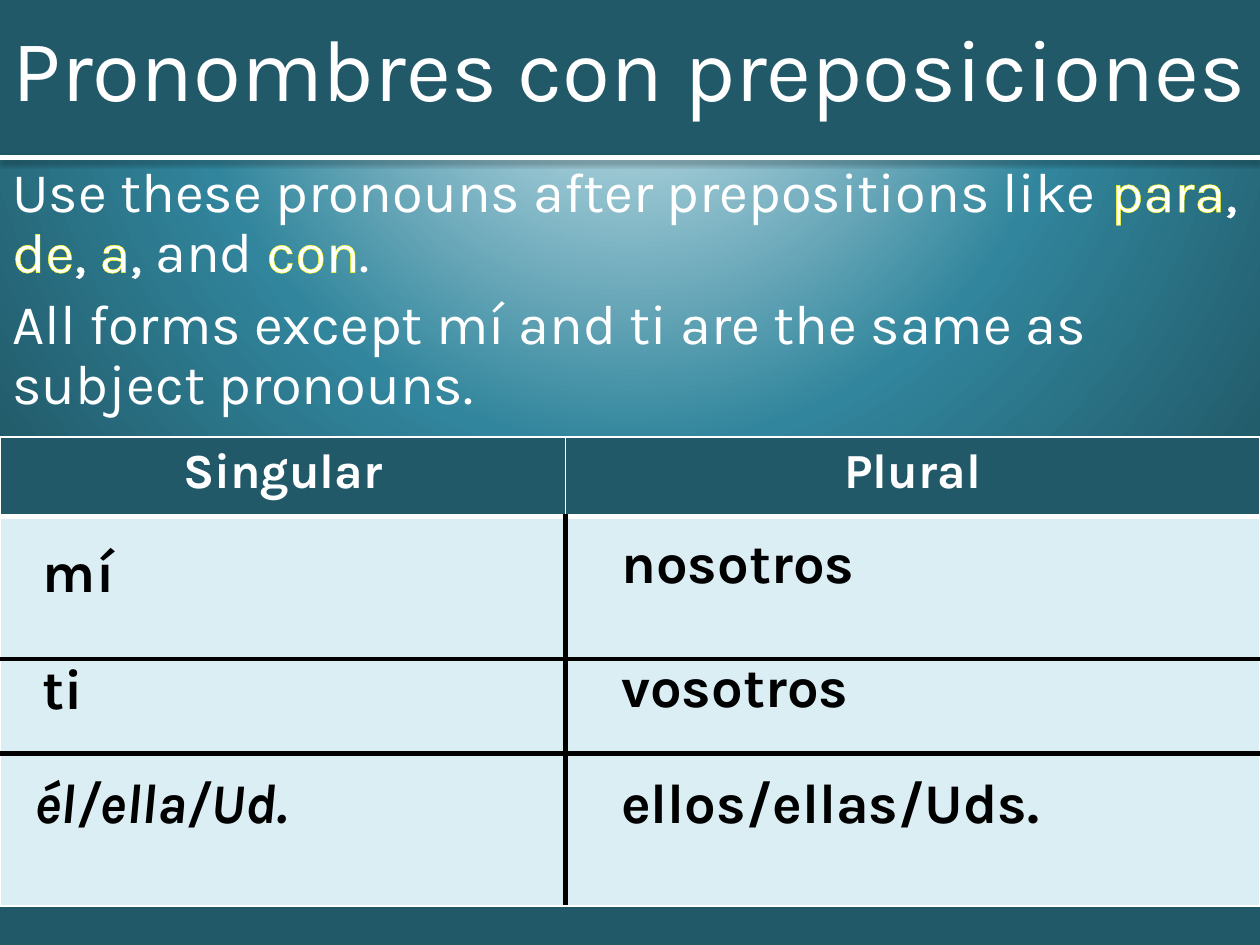
from lxml import etree
from pptx import Presentation, util as u
from pptx.dml.color import RGBColor
from pptx.enum import shapes, text
from pptx.oxml import ns, parse_xml

INK = {"dark": "215968", "mid": "31859C", "pale": "DBEEF4",
       "white": "FFFFFF", "black": "000000", "gold": "FFFF00"}
FONT = "Karla"
PLAIN = "{2D5ABB26-0587-4C30-8999-92F81FD0307C}"
EDGES = ("lnL", "lnR", "lnT", "lnB")


def tint(name):
    """Return a palette colour."""
    return RGBColor.from_string(INK[name])


def node(tag, body="", **attrs):
    """Build a drawing element with attributes and inner markup."""
    item = parse_xml(f"<a:{tag} {ns.nsdecls('a')}>{body}</a:{tag}>")
    for key, val in attrs.items():
        item.set(key, str(val))
    return item


def solid(name):
    """Return the markup of a solid fill."""
    return f'<a:solidFill><a:srgbClr val="{INK[name]}"/></a:solidFill>'


def back(slide):
    """Paint the background with a glow from above the slide."""
    slide.background.fill.gradient()
    grad = slide.background.fill._fill._gradFill
    stops = "".join(
        f'<a:gs pos="{pos * 1000}"><a:srgbClr val="{INK[name]}"/></a:gs>'
        for pos, name in ((0, "pale"), (57, "mid"), (100, "dark")))
    for child in list(grad):
        grad.remove(child)
    grad.append(node("gsLst", stops))
    grad.append(node("path", '<a:fillToRect l="50000" t="-80000" r="50000" b="180000"/>',
                     path="circle"))


def write(para, words, size=32, ink="white", bold=False, slant=False,
          edge=None, align=None):
    """Add a formatted run to a paragraph."""
    run = para.add_run()
    run.text = words
    font = run.font
    font.name, font.size, font.bold, font.italic = FONT, u.Pt(size), bold, slant
    font.color.rgb = tint(ink)
    if edge:
        run._r.get_or_add_rPr().insert(0, node("ln", solid(edge), w=u.Pt(1.5)))
    if align is not None:
        para.alignment = align


def box(slide, left, top, width, height, anchor=text.MSO_ANCHOR.TOP):
    """Add a wrapping text box and return its frame."""
    frame = slide.shapes.add_textbox(*map(u.Inches, (left, top, width, height))).text_frame
    frame.word_wrap = True
    frame.vertical_anchor = anchor
    return frame


def band(slide):
    """Draw the title band."""
    rect = slide.shapes.add_shape(shapes.MSO_SHAPE.RECTANGLE, 0, 0,
                                  u.Inches(10), u.Inches(1.25))
    rect.shadow.inherit = False
    rect.fill.solid()
    rect.fill.fore_color.rgb = tint("dark")
    rect.line.fill.background()


def rule(slide):
    """Draw the shaded white line under the title."""
    line = slide.shapes.add_connector(shapes.MSO_CONNECTOR.STRAIGHT, 0,
                                      u.Inches(1.25), u.Inches(10), u.Inches(1.25))
    line.line.color.rgb = tint("white")
    line.line.width = u.Pt(3)
    shade = node("outerShdw", f'<a:srgbClr val="{INK["black"]}"><a:alpha val="38000"/></a:srgbClr>',
                 blurRad=u.Pt(3.1), dist=u.Pt(1.6), dir=90 * 60000, rotWithShape=0)
    effects = etree.SubElement(line._element.spPr, ns.qn("a:effectLst"))
    effects.append(shade)


def table(slide, left, top, cols, rows):
    """Add an unstyled table and return it."""
    grid = slide.shapes.add_table(len(rows), len(cols), *map(
        u.Inches, (left, top, sum(cols), sum(rows)))).table
    grid._tbl.tblPr.find(ns.qn("a:tableStyleId")).text = PLAIN
    grid.first_row = grid.horz_banding = False
    for col, width in zip(grid.columns, cols):
        col.width = u.Inches(width)
    for row, height in zip(grid.rows, rows):
        row.height = u.Inches(height)
    return grid


def trim(cell, fill, marks):
    """Set the borders and the fill of a cell."""
    props = cell._tc.get_or_add_tcPr()
    for edge, (ink, width) in zip(EDGES, marks):
        props.append(node(edge, solid(ink), w=u.Pt(width)))
    cell.fill.solid()
    cell.fill.fore_color.rgb = tint(fill)


def frame(slide):
    """Build the two-column grid with its headings."""
    thin, wide, bar = ("white", 1), ("white", 3), ("black", 3)
    levels = (thin, wide, bar, bar, thin)
    grid = table(slide, 0, 3.47, (4.49, 5.51), (0.63, 1.13, 0.75, 1.21))
    for row in range(4):
        inner = bar if row else thin
        sides = (thin, inner, thin)
        for col in range(2):
            trim(grid.cell(row, col), "pale" if row else "dark",
                 (*sides[col:col + 2], *levels[row:row + 2]))
    for col, head in enumerate(("Singular", "Plural")):
        write(grid.cell(0, col).text_frame.paragraphs[0], head, size=28,
              bold=True, align=text.PP_ALIGN.CENTER)


def label(slide, words, left, top, width, height=0.63, slant=False):
    """Place a pronoun in a one-cell table."""
    cell = table(slide, left, top, (width,), (height,)).cell(0, 0)
    cell.fill.background()
    write(cell.text_frame.paragraphs[0], words, ink="black", bold=True, slant=slant)


def notes(slide):
    """Write the two rules of use."""
    pieces = (
        (("Use these pronouns after prepositions like ", None), ("para", "gold"),
         (",", "white"), (" de", "gold"), (",", "white"), (" a", "gold"),
         (", ", "white"), ("and", None), (" con", "gold"), (".", None)),
        (("All forms except mí and ti are the same as subject pronouns.", None),))
    body = box(slide, 0, 1.25, 10, 5.62)
    for num, runs in enumerate(pieces):
        para = body.add_paragraph() if num else body.paragraphs[0]
        para.line_spacing = 0.9
        para.space_before = u.Pt(6.4)
        for words, edge in runs:
            write(para, words, edge=edge)


def main():
    """Build and save the slide."""
    deck = Presentation()
    deck.slide_width, deck.slide_height = u.Inches(10), u.Inches(7.5)
    slide = deck.slides.add_slide(deck.slide_layouts[6])
    back(slide)
    band(slide)
    notes(slide)
    rule(slide)
    title = box(slide, 0, 0, 10, 1.06, text.MSO_ANCHOR.MIDDLE)
    write(title.paragraphs[0], "Pronombres con preposiciones", size=50,
          align=text.PP_ALIGN.CENTER)
    frame(slide)
    label(slide, "mí", 0.24, 4.24, 3.55)
    label(slide, "ti", 0.24, 5.17, 3.95)
    label(slide, "él/ella/Ud.", 0.17, 6.08, 4.62, 1.18, slant=True)
    label(slide, "nosotros", 4.83, 4.17, 2.82, 0.68)
    label(slide, "vosotros", 4.83, 5.16, 3.56)
    label(slide, "ellos/ellas/Uds.", 4.83, 6.08, 4.85)
    deck.save("out.pptx")


if __name__ == "__main__":
    main()
